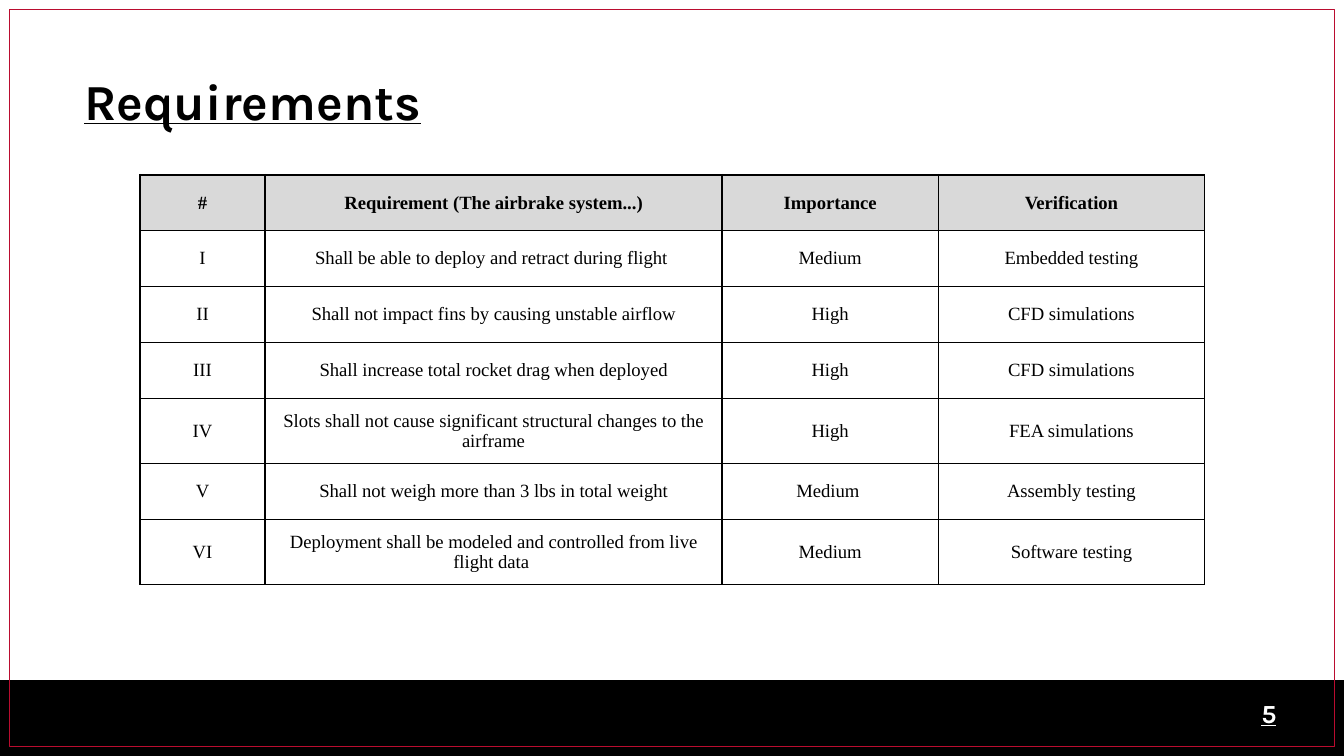
import dataclasses

import pptx
import pptx.dml.color
import pptx.enum.shapes
import pptx.enum.text
import pptx.oxml
import pptx.oxml.ns
import pptx.util
from pptx.util import Pt


@dataclasses.dataclass(frozen=True)
class Theme:
    black: str = "000000"
    white: str = "FFFFFF"
    accent: str = "BA0C2F"
    header_fill: str = "D9D9D9"
    heading_font: str = "Karla"
    table_font: str = "Times New Roman"
    title_size: float = 27
    number_size: float = 14
    table_size: float = 10


THEME = Theme()

COLUMN_WIDTHS = (67, 244.8, 115.9, 142.6)
ROW_HEIGHT = 30
REQUIREMENTS = (
    ("#", "Requirement (The airbrake system...)", "Importance", "Verification"),
    ("I", "Shall be able to deploy and retract during flight ", "Medium", "Embedded testing"),
    ("II", "Shall not impact fins by causing unstable airflow", "High", "CFD simulations"),
    ("III", "Shall increase total rocket drag when deployed", "High", "CFD simulations"),
    ("IV", "Slots shall not cause significant structural changes to the airframe",
     "High", "FEA simulations"),
    ("V", "Shall not weigh more than 3 lbs in total weight", "Medium ", "Assembly testing"),
    ("VI", "Deployment shall be modeled and controlled from live flight data ",
     "Medium", "Software testing"),
)


def rgb(color):
    return pptx.dml.color.RGBColor.from_string(color)


def add_rectangle(slide, left, top, width, height, fill=None, line=None):
    shape = slide.shapes.add_shape(
        pptx.enum.shapes.MSO_SHAPE.RECTANGLE, Pt(left), Pt(top), Pt(width), Pt(height))
    shape.shadow.inherit = False
    if fill:
        shape.fill.solid()
        shape.fill.fore_color.rgb = rgb(fill)
    else:
        shape.fill.background()
    if line:
        shape.line.color.rgb = rgb(line)
        shape.line.width = Pt(0.75)
    else:
        shape.line.fill.background()


def add_run(paragraph, text, font_name, size, color, bold=False, underline=False):
    run = paragraph.add_run()
    run.text = text
    run.font.name = font_name
    run.font.size = Pt(size)
    run.font.color.rgb = rgb(color)
    run.font.bold = bold
    run.font.underline = underline


def add_heading_text(slide, text, left, top, width, height, size, color, anchor):
    """Add a bold, underlined text box in the heading font."""
    shape = slide.shapes.add_textbox(Pt(left), Pt(top), Pt(width), Pt(height))
    frame = shape.text_frame
    frame.word_wrap = True
    frame.vertical_anchor = anchor
    frame.margin_left = frame.margin_right = Pt(5.4)
    frame.margin_top = frame.margin_bottom = Pt(2.7)
    add_run(frame.paragraphs[0], text, THEME.heading_font, size, color,
            bold=True, underline=True)


def set_cell_borders(cell, color, width):
    properties = cell._tc.get_or_add_tcPr()
    for position, side in enumerate(("lnL", "lnR", "lnT", "lnB")):
        border = pptx.oxml.parse_xml(
            f'<a:{side} {pptx.oxml.ns.nsdecls("a")} w="{Pt(width)}">'
            f'<a:solidFill><a:srgbClr val="{color}"/></a:solidFill></a:{side}>')
        properties.insert(position, border)


def fill_cell(cell, text, is_header):
    cell.margin_left = cell.margin_right = Pt(5.4)
    cell.margin_top = cell.margin_bottom = Pt(5.4)
    cell.vertical_anchor = pptx.enum.text.MSO_ANCHOR.MIDDLE
    if is_header:
        cell.fill.solid()
        cell.fill.fore_color.rgb = rgb(THEME.header_fill)
    else:
        cell.fill.background()
    set_cell_borders(cell, THEME.black, 1)
    paragraph = cell.text_frame.paragraphs[0]
    paragraph.alignment = pptx.enum.text.PP_ALIGN.CENTER
    add_run(paragraph, text, THEME.table_font, THEME.table_size, THEME.black, bold=is_header)


def add_requirements_table(slide, left, top):
    table = slide.shapes.add_table(
        len(REQUIREMENTS), len(COLUMN_WIDTHS), Pt(left), Pt(top),
        Pt(sum(COLUMN_WIDTHS)), Pt(ROW_HEIGHT * len(REQUIREMENTS))).table
    table.horz_banding = False
    for column, width in zip(table.columns, COLUMN_WIDTHS):
        column.width = Pt(width)
    for row_index, texts in enumerate(REQUIREMENTS):
        table.rows[row_index].height = Pt(ROW_HEIGHT)
        for column_index, text in enumerate(texts):
            fill_cell(table.cell(row_index, column_index), text, row_index == 0)


def main():
    presentation = pptx.Presentation()
    presentation.slide_width = Pt(720)
    presentation.slide_height = Pt(405)
    slide = presentation.slides.add_slide(presentation.slide_layouts[6])
    slide.background.fill.solid()
    slide.background.fill.fore_color.rgb = rgb(THEME.white)

    add_rectangle(slide, 0, 364.4, 720, 40.6, fill=THEME.black)
    add_rectangle(slide, 5, 5, 710, 395, line=THEME.accent)
    add_heading_text(slide, "5", 670.3, 371, 41.8, 21.6, THEME.number_size, THEME.white,
                     pptx.enum.text.MSO_ANCHOR.MIDDLE)
    add_heading_text(slide, "Requirements", 39.6, 34.6, 644.4, 40.3, THEME.title_size,
                     THEME.black, pptx.enum.text.MSO_ANCHOR.TOP)
    add_requirements_table(slide, 75, 93.6)
    presentation.save("out.pptx")


if __name__ == "__main__":
    main()
